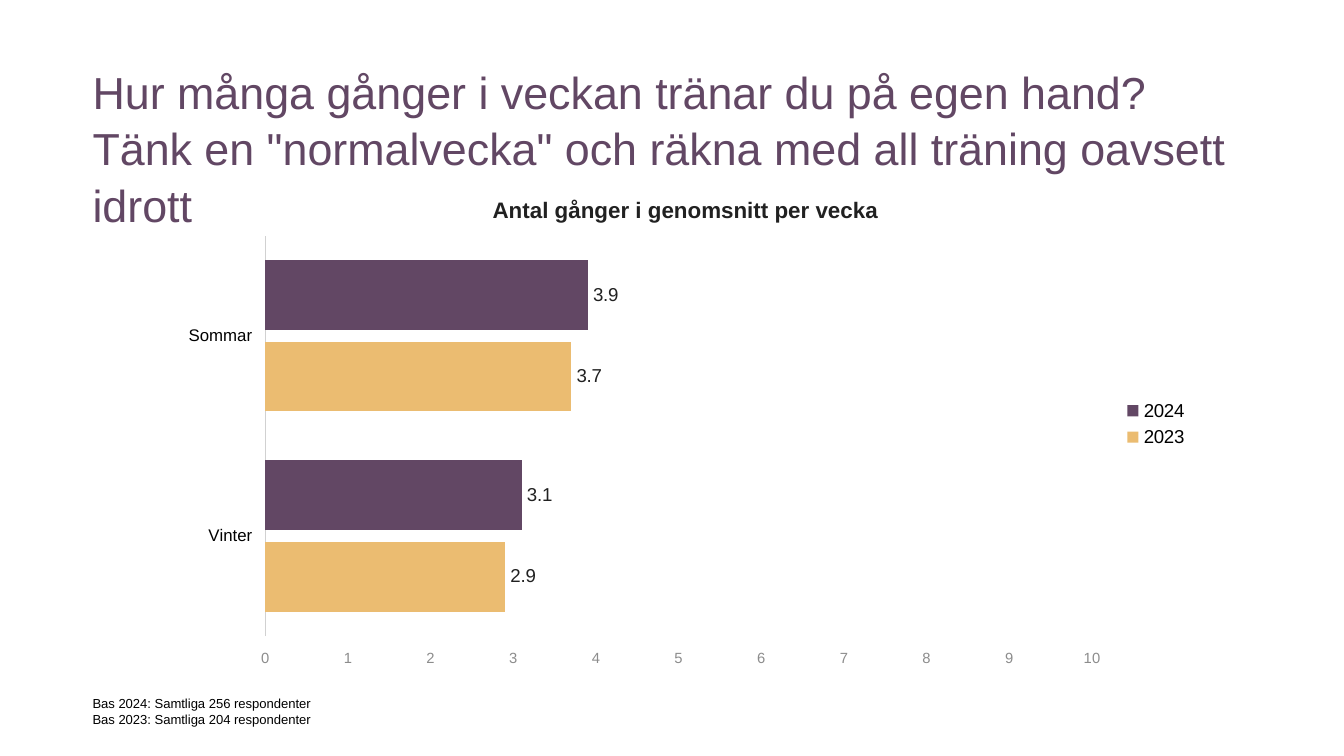
from dataclasses import dataclass

from pptx import Presentation
from pptx import util as u
from pptx.chart import data
from pptx.dml import color
from pptx.enum import chart as ch
from pptx.oxml import parse_xml
from pptx.oxml.ns import nsdecls


@dataclass(frozen=True)
class Theme:
    font: str = "Arial"
    purple: str = "624764"
    yellow: str = "EBBC71"
    ink: str = "212121"
    black: str = "000000"
    grey: str = "8C8C8C"
    rule: str = "D1D1D1"
    heading: float = 24
    chart_title: float = 12
    label: float = 10
    category: float = 9
    scale: float = 7.9
    note: float = 7


class Deck:
    """Builds slides in one theme, adding elements to the current slide."""

    def __init__(self, theme, width, height):
        self.t = theme
        self.prs = Presentation()
        self.prs.slide_width, self.prs.slide_height = u.Cm(width), u.Cm(height)
        self.s = self.prs.slides.add_slide(self.prs.slide_layouts[6])

    def assign(self, obj, **values):
        for name, value in values.items():
            setattr(obj, name, value)

    def style(self, font, size, rgb, bold=False):
        self.assign(font, name=self.t.font, size=u.Pt(size), bold=bold)
        font.color.rgb = color.RGBColor.from_string(rgb)

    def paint(self, fill, rgb):
        fill.solid()
        fill.fore_color.rgb = color.RGBColor.from_string(rgb)

    def text(self, box, lines, size, rgb):
        tf = self.s.shapes.add_textbox(*map(u.Cm, box)).text_frame
        self.assign(tf, word_wrap=True, margin_left=0, margin_right=0,
                    margin_top=0, margin_bottom=0)
        for i, line in enumerate(lines):
            p = tf.add_paragraph() if i else tf.paragraphs[0]
            p.line_spacing = 1.05
            r = p.add_run()
            r.text = line
            self.style(r.font, size, rgb)

    def layout(self, parent, inner=False, **fractions):
        modes = {"layoutTarget": "inner"} if inner else {}
        modes.update(xMode="edge", yMode="edge", **fractions)
        tags = "".join(f'<c:{k} val="{v}"/>' for k, v in modes.items())
        old = parent.find("{*}layout")
        if old is not None:
            parent.remove(old)
        new = parse_xml(f'<c:layout {nsdecls("c")}><c:manualLayout>{tags}'
                        '</c:manualLayout></c:layout>')
        tx = parent.find("{*}tx")
        parent.insert(0 if tx is None else parent.index(tx) + 1, new)

    def axis(self, axis, size, rgb):
        self.assign(axis, has_major_gridlines=False,
                    major_tick_mark=ch.XL_TICK_MARK.NONE,
                    minor_tick_mark=ch.XL_TICK_MARK.NONE,
                    tick_label_position=ch.XL_TICK_LABEL_POSITION.LOW)
        self.style(axis.tick_labels.font, size, rgb)

    def bars(self, box, title, categories, series):
        t = self.t
        cd = data.CategoryChartData(number_format="0.0")
        cd.categories = categories
        for name, values, _ in series:
            cd.add_series(name, values)
        chart = self.s.shapes.add_chart(
            ch.XL_CHART_TYPE.BAR_CLUSTERED, *map(u.Cm, box), cd).chart
        self.style(chart.font, t.label, t.ink)

        chart.has_title = True
        r = chart.chart_title.text_frame.paragraphs[0].add_run()
        r.text = title
        self.style(r.font, t.chart_title, t.ink, bold=True)
        self.layout(chart.chart_title._element, x=0.31, y=0.04)

        chart.has_legend = True
        self.assign(chart.legend, include_in_layout=False,
                    position=ch.XL_LEGEND_POSITION.RIGHT)
        self.style(chart.legend.font, t.label, t.black)

        self.axis(chart.category_axis, t.category, t.black)
        line = chart.category_axis.format.line
        line.width = u.Pt(0.75)
        self.paint(line.fill, t.rule)
        self.axis(chart.value_axis, t.scale, t.grey)
        self.assign(chart.value_axis, minimum_scale=0, maximum_scale=10, major_unit=1)
        self.assign(chart.value_axis.tick_labels, number_format="General",
                    number_format_is_linked=False)
        chart.value_axis.format.line.fill.background()

        plot = chart.plots[0]
        self.assign(plot, gap_width=70, overlap=-16, vary_by_categories=False)
        for ser, (_, _, rgb) in zip(plot.series, series):
            self.paint(ser.format.fill, rgb)
            self.assign(ser.data_labels, show_value=True, number_format="0.0",
                        number_format_is_linked=False,
                        position=ch.XL_LABEL_POSITION.OUTSIDE_END)
            self.style(ser.data_labels.font, t.label, t.ink)
        self.layout(chart._chartSpace.chart.plotArea, inner=True,
                    x=0.094, y=0.127, w=0.8, h=0.794)


def main():
    t = Theme()
    deck = Deck(t, 25.4, 14.29)
    deck.text((1.75, 1.17, 21.79, 2.08),
              ['Hur många gånger i veckan tränar du på egen hand? '
               'Tänk en "normalvecka" och räkna med all träning oavsett idrott'],
              t.heading, t.purple)
    deck.bars((3.18, 3.25, 19.53, 9.53), "Antal gånger i genomsnitt per vecka",
              ["Vinter", "Sommar"],
              [("2023", (2.9, 3.7), t.yellow), ("2024", (3.1, 3.9), t.purple)])
    deck.text((1.75, 13.13, 4.57, 0.79),
              [f"Bas {year}: Samtliga {count} respondenter"
               for year, count in ((2024, 256), (2023, 204))],
              t.note, t.black)
    deck.prs.save("out.pptx")


if __name__ == "__main__":
    main()
